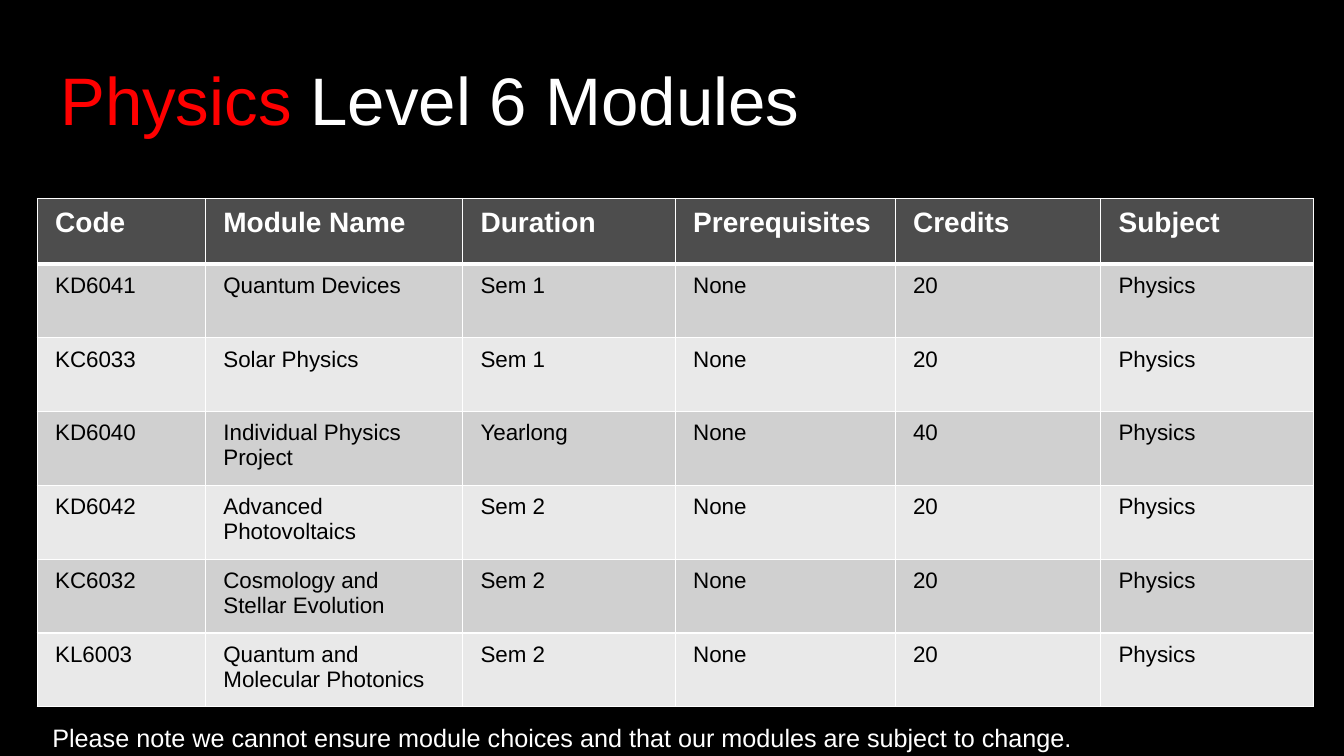
from lxml import etree
from pptx import Presentation
from pptx import util as u
from pptx.dml.color import RGBColor
from pptx.enum import text
from pptx.oxml import ns

BLACK = RGBColor(0x00, 0x00, 0x00)
WHITE = RGBColor(0xFF, 0xFF, 0xFF)
RED = RGBColor(0xFF, 0x00, 0x00)
HEADER_GREY = RGBColor(0x4D, 0x4D, 0x4D)
DARK_BAND = RGBColor(0xD0, 0xD0, 0xD0)
LIGHT_BAND = RGBColor(0xE9, 0xE9, 0xE9)


def add_text(para, words, size=16, color=BLACK, bold=False):
    span = para.add_run()
    span.text = words
    span.font.name = "Arial"
    span.font.size = u.Pt(size)
    span.font.color.rgb = color
    span.font.bold = bold


def add_border(cell, side, width):
    properties = cell._tc.get_or_add_tcPr()
    line = etree.SubElement(properties, ns.qn(f"a:ln{side}"), w=str(u.Pt(width)))
    fill = etree.SubElement(line, ns.qn("a:solidFill"))
    etree.SubElement(fill, ns.qn("a:srgbClr"), val=str(WHITE))


deck = Presentation()
deck.slide_width = u.Cm(33.87)
deck.slide_height = u.Cm(19.05)
page = deck.slides.add_slide(deck.slide_layouts[6])
page.background.fill.solid()
page.background.fill.fore_color.rgb = BLACK

modules = [
    ("Code", "Module Name", "Duration", "Prerequisites", "Credits", "Subject"),
    ("KD6041", "Quantum Devices", "Sem 1", "None", "20", "Physics"),
    ("KC6033", "Solar Physics", "Sem 1", "None", "20", "Physics"),
    ("KD6040", "Individual Physics Project", "Yearlong", "None", "40", "Physics"),
    ("KD6042", "Advanced Photovoltaics", "Sem 2", "None", "20", "Physics"),
    ("KC6032", "Cosmology and Stellar Evolution", "Sem 2", "None", "20", "Physics"),
    ("KL6003", "Quantum and Molecular Photonics", "Sem 2", "None", "20", "Physics"),
]
column_widths = [4.24, 6.48, 5.36, 5.54, 5.18, 5.36]

frame = page.shapes.add_table(
    len(modules), len(column_widths), u.Cm(0.94), u.Cm(5), u.Cm(32.16), u.Cm(12.81)
)
table = frame.table
for column, width in zip(table.columns, column_widths):
    column.width = u.Cm(width)

for row, values in enumerate(modules):
    header = row == 0
    table.rows[row].height = u.Cm(1.65 if header else 1.86)
    for column, value in enumerate(values):
        cell = table.cell(row, column)
        cell.margin_left = cell.margin_right = u.Cm(0.45)
        cell.margin_top = cell.margin_bottom = u.Cm(0.23)
        add_border(cell, "L", 1)
        add_border(cell, "R", 1)
        add_border(cell, "T", 3 if row == 1 else 1)
        add_border(cell, "B", 3 if header else 1)
        cell.fill.solid()
        para = cell.text_frame.paragraphs[0]
        if header:
            cell.fill.fore_color.rgb = HEADER_GREY
            add_text(para, value, size=20, color=WHITE, bold=True)
        else:
            cell.fill.fore_color.rgb = DARK_BAND if row % 2 else LIGHT_BAND
            add_text(para, value)

title_box = page.shapes.add_textbox(u.Cm(1.27), u.Cm(1.02), u.Cm(25.78), u.Cm(3.18))
title_box.text_frame.word_wrap = True
title_box.text_frame.vertical_anchor = text.MSO_ANCHOR.MIDDLE
para = title_box.text_frame.paragraphs[0]
para.line_spacing = 0.9
add_text(para, "Physics", size=48, color=RED)
add_text(para, " Level 6 Modules", size=48, color=WHITE)

note_box = page.shapes.add_textbox(u.Cm(1.07), u.Cm(18.08), u.Cm(31.06), u.Cm(1.02))
note_box.text_frame.word_wrap = True
note_box.text_frame.auto_size = text.MSO_AUTO_SIZE.SHAPE_TO_FIT_TEXT
add_text(
    note_box.text_frame.paragraphs[0],
    "Please note we cannot ensure module choices and that our modules are subject to change.",
    size=18,
    color=WHITE,
)

deck.save("out.pptx")
